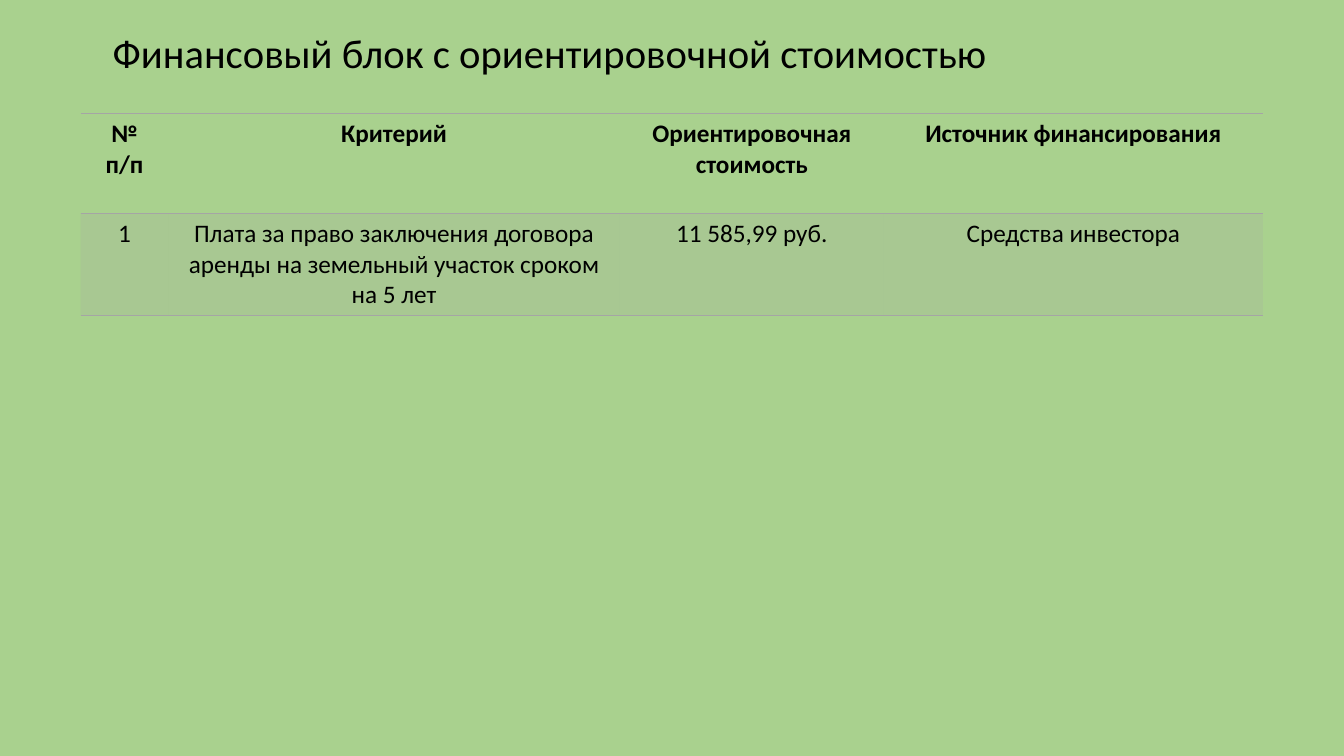
from lxml.etree import SubElement
from pptx import Presentation
from pptx.dml.color import RGBColor
from pptx.enum.text import MSO_ANCHOR as Anchor, PP_ALIGN as Align
from pptx.oxml.ns import qn
from pptx.util import Pt

GREEN = RGBColor(0xA9, 0xD1, 0x8E)
GRAY = RGBColor(0xA5, 0xA5, 0xA5)
BLACK = RGBColor(0, 0, 0)

COLUMN_WIDTHS = (62.6, 322.6, 188.6, 270.7)
ROW_HEIGHTS = (71.3, 73)
COSTS = (
    ("№ п/п", "Критерий", "Ориентировочная стоимость", "Источник финансирования"),
    ("1", "Плата за право заключения договора аренды на земельный участок сроком на 5 лет",
     "11 585,99 руб.", "Средства инвестора"),
)


class SlideBuilder:
    """Holds the text style and the current slide."""

    def __init__(self, page, font="Calibri", color=BLACK):
        self.page, self.font, self.color = page, font, color

    def background(self, color):
        fill = self.page.background.fill
        fill.solid()
        fill.fore_color.rgb = color

    def add_text(self, para, text, size, bold=False):
        span = para.add_run()
        span.text = text
        span.font.name = self.font
        span.font.size = Pt(size)
        span.font.bold = bold
        span.font.color.rgb = self.color

    def title(self, text, left, top, width, height, size):
        box = self.page.shapes.add_textbox(Pt(left), Pt(top), Pt(width), Pt(height))
        frame = box.text_frame
        frame.word_wrap = True
        frame.vertical_anchor = Anchor.MIDDLE
        para = frame.paragraphs[0]
        para.line_spacing = 0.9
        self.add_text(para, text, size)

    def borders(self, cell, color):
        properties = cell._tc.get_or_add_tcPr()
        for side in ("L", "R", "T", "B"):
            line = SubElement(properties, qn(f"a:ln{side}"), w=str(Pt(1)))
            if side in "LR":
                SubElement(line, qn("a:noFill"))
            else:
                solid = SubElement(line, qn("a:solidFill"))
                SubElement(solid, qn("a:srgbClr"), val=str(color))

    def tint(self, cell, color, percent):
        cell.fill.solid()
        cell.fill.fore_color.rgb = color
        shade = cell._tc.tcPr.find(qn("a:solidFill")).find(qn("a:srgbClr"))
        SubElement(shade, qn("a:alpha"), val=str(percent * 1000))

    def table(self, rows, left, top, widths, heights, size):
        table = self.page.shapes.add_table(
            len(rows), len(widths), Pt(left), Pt(top),
            Pt(sum(widths)), Pt(sum(heights))).table
        table.first_row = table.horz_banding = False
        for column, width in zip(table.columns, widths):
            column.width = Pt(width)
        for row, height in zip(table.rows, heights):
            row.height = Pt(height)
        for row_index, texts in enumerate(rows):
            header = row_index == 0
            for column_index, text in enumerate(texts):
                cell = table.cell(row_index, column_index)
                self.borders(cell, GRAY)
                if header:
                    cell.fill.background()
                else:
                    self.tint(cell, GRAY, 20)
                para = cell.text_frame.paragraphs[0]
                para.alignment = Align.CENTER
                self.add_text(para, text, size, bold=header)


def main():
    deck = Presentation()
    deck.slide_width, deck.slide_height = Pt(960), Pt(540)
    builder = SlideBuilder(deck.slides.add_slide(deck.slide_layouts[6]))
    builder.background(GREEN)

    # Heading
    builder.title("Финансовый блок с ориентировочной стоимостью", 73.4, 9.4, 828, 60.5, 29)

    # Cost table
    builder.table(COSTS, 57.6, 81.1, COLUMN_WIDTHS, ROW_HEIGHTS, 18)

    deck.save("out.pptx")


if __name__ == "__main__":
    main()
